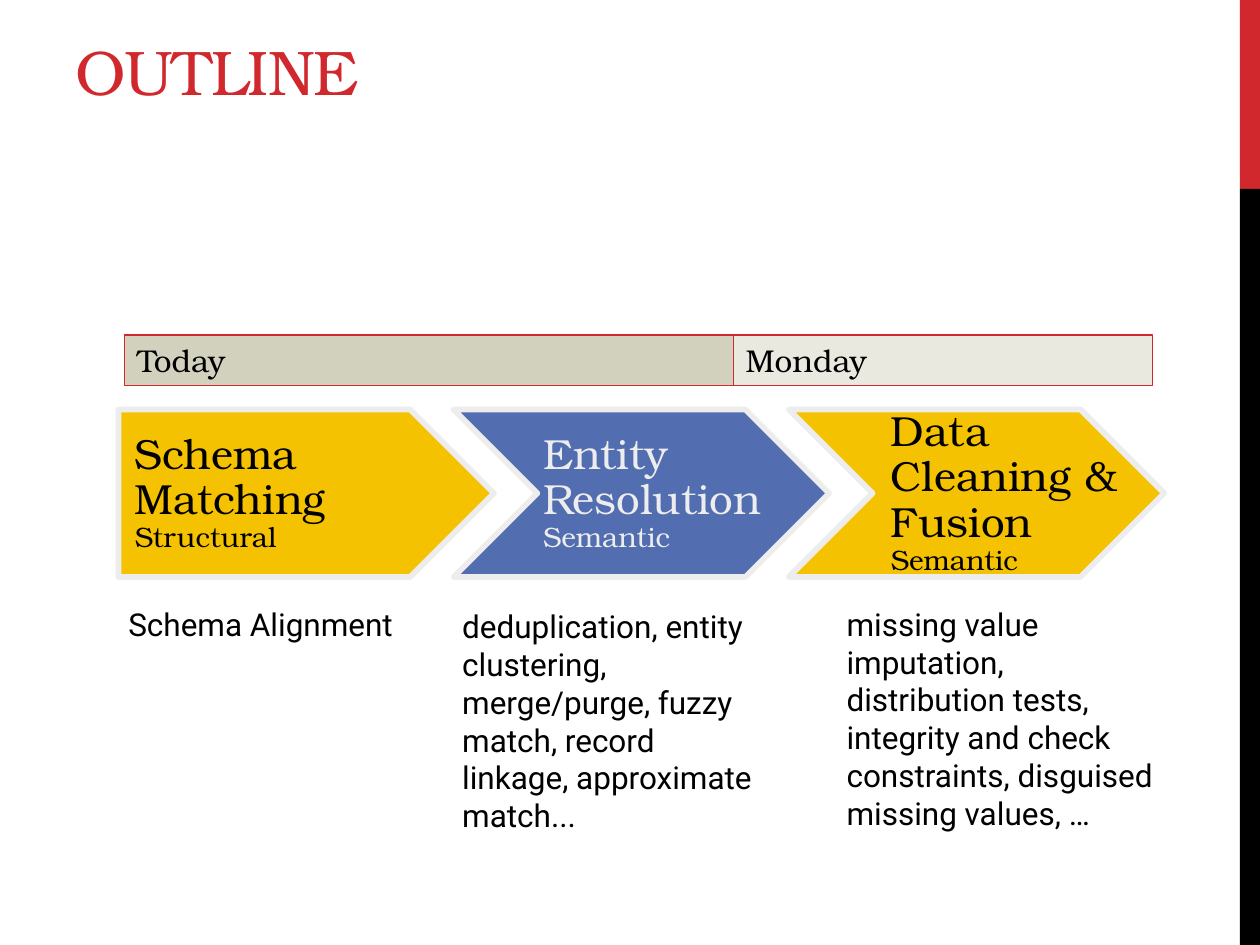
from pptx import Presentation
from pptx.dml.color import RGBColor
from pptx.enum.shapes import MSO_SHAPE
from pptx.enum.text import MSO_ANCHOR, PP_ALIGN
from pptx.util import Pt

RECT, PENTAGON, CHEVRON = MSO_SHAPE.RECTANGLE, MSO_SHAPE.PENTAGON, MSO_SHAPE.CHEVRON
TOP, MIDDLE, BOTTOM = MSO_ANCHOR.TOP, MSO_ANCHOR.MIDDLE, MSO_ANCHOR.BOTTOM
LEFT = PP_ALIGN.LEFT

PX = 9144  # 100 px to the inch
SERIF, SANS = "TeX Gyre Bonum", "Roboto"
COLORS = {
    "red": "D1282E", "black": "000000", "gold": "F5C201", "blue": "526DB0",
    "pale": "EDEDED", "sand": "D2D1BE", "light sand": "E9E9E0",
}

# Content
TITLE = "OUTLINE"
SIDE_BAR = [("red", 0, 150), ("black", 150, 600)]  # color, top, height
DAYS = [("Today", "sand", 483), ("Monday", "light sand", 333)]  # text, fill, width
STEPS = [  # outline, fill, text color, label left, label width, heading, kind
    (PENTAGON, "gold", "black", 85, 206, "Schema Matching", "Structural"),
    (CHEVRON, "blue", "pale", 409, 206, "Entity Resolution", "Semantic"),
    (CHEVRON, "gold", "black", 685, 230, "Data Cleaning & Fusion", "Semantic"),
]
TOPICS = [  # left, top, width, height, text
    (92, 475, 233, 40, "Schema Alignment"),
    (357, 477, 263, 192, "deduplication, entity clustering, merge/purge, fuzzy match, "
     "record linkage, approximate match..."),
    (662, 475, 275, 192, "missing value imputation, distribution tests, integrity and "
     "check constraints, disguised missing values, …"),
]
DAY_LEFT, DAY_TOP, DAY_HEIGHT = 99, 266, 40
STEP_LEFT, STEP_TOP, STEP_WIDTH, STEP_HEIGHT = 94, 325, 298, 133
STEP_PITCH = 266
LABEL_MARGINS = (22, 8, 4, 8)


def color(name):
    return RGBColor.from_string(COLORS[name])


def scaled(*lengths):
    return [length * PX for length in lengths]


def add_block(page, outline, place, fill, line=None, line_width=0):
    block = page.shapes.add_shape(outline, *scaled(*place))
    block.shadow.inherit = False
    block.fill.solid()
    block.fill.fore_color.rgb = color(fill)
    if line:
        block.line.color.rgb = color(line)
        block.line.width = Pt(line_width)
    else:
        block.line.fill.background()
    return block


def write(shape, lines, font, ink, anchor=TOP, margins=(10, 5, 10, 5), spacing=None):
    """Fill a shape with paragraphs given as (text, point size)."""
    frame = shape.text_frame
    frame.word_wrap = True
    frame.vertical_anchor = anchor
    (frame.margin_left, frame.margin_top,
     frame.margin_right, frame.margin_bottom) = scaled(*margins)
    for index, (text, size) in enumerate(lines):
        para = frame.add_paragraph() if index else frame.paragraphs[0]
        para.text = text
        para.alignment = LEFT
        para.line_spacing = spacing
        para.font.name = font
        para.font.size = Pt(size)
        para.font.color.rgb = color(ink)


def main():
    deck = Presentation()
    deck.slide_width, deck.slide_height = scaled(1000, 750)
    page = deck.slides.add_slide(deck.slide_layouts[5])

    # Side bar
    for fill, top, height in SIDE_BAR:
        add_block(page, RECT, (984, top, 16, height), fill)

    # Title
    title = page.shapes.title
    title.left, title.top, title.width, title.height = scaled(50, 3, 934, 88)
    write(title, [(TITLE, 36)], SERIF, "red", BOTTOM)
    title.text_frame.paragraphs[0].runs[0].font._element.set("spc", "-60")

    # Process arrows with their labels
    for index, (outline, fill, ink, left, width, heading, kind) in enumerate(STEPS):
        place = (STEP_LEFT + index * STEP_PITCH, STEP_TOP, STEP_WIDTH, STEP_HEIGHT)
        add_block(page, outline, place, fill, "pale", 3.25)
        label = page.shapes.add_textbox(*scaled(left, STEP_TOP, width, STEP_HEIGHT))
        write(label, [(heading, 24), (kind, 16)], SERIF, ink, MIDDLE, LABEL_MARGINS, 0.9)

    # Day bands
    left = DAY_LEFT
    for text, fill, width in DAYS:
        band = add_block(page, RECT, (left, DAY_TOP, width, DAY_HEIGHT), fill, "red", 0.75)
        write(band, [(text, 18)], SERIF, "black")
        left += width

    # Topics under each step
    for *place, text in TOPICS:
        box = page.shapes.add_textbox(*scaled(*place))
        write(box, [(text, 18)], SANS, "black")

    deck.save("out.pptx")


if __name__ == "__main__":
    main()
